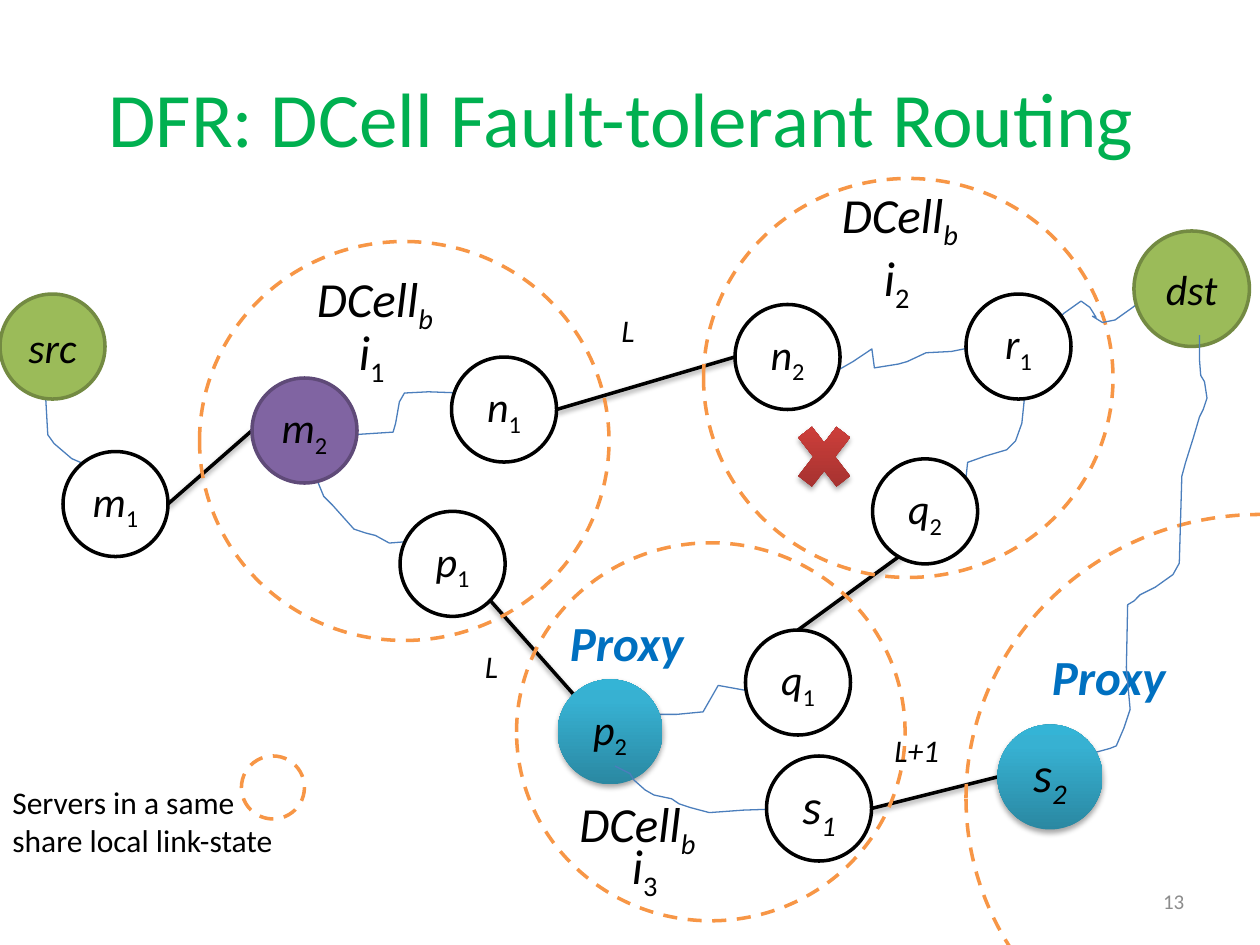
from copy import deepcopy
from pptx import Presentation
from pptx.dml.color import RGBColor
from pptx.enum.dml import MSO_LINE
from pptx.enum.shapes import MSO_CONNECTOR as Link, MSO_SHAPE as Kind
from pptx.enum.text import MSO_ANCHOR as Anchor, PP_ALIGN as Align
from pptx.oxml import parse_xml
from pptx.oxml.ns import nsdecls
from pptx.util import Inches, Pt

UNIT = Inches(1) / 12
FINE = Inches(1) / 100
WHITE, BLACK, ORANGE = "FFFFFF", "000000", "F79646"
TEAL = ("2A88A2", "37B1D2", "34B4D6")
RED = ("9C2F2D", "CB3E3A", "CE3B37")
PLAIN, GREEN, PLUM = (WHITE, BLACK), ("9BBB59", "738A42"), ("8064A2", "5F4A78")

LINKS = [(53, 39, 70, 34), (87, 52, 76, 60), (46.7, 57.2, 54.6, 66.1),
         (16, 48, 24, 41), (83, 77, 95, 74)]
ZONES = [((49.2, 51.7, 37, 36), "3", (4.8, 23.3), (9.8, 27.3)),
         ((19, 23, 39, 38), "1", (10, 2), (14, 7)),
         ((67, 17, 39, 38), "2", (12, 0), (16, 6))]
NODES = [((0, 28, 10), "src", "", GREEN, 24), ((108, 22, 11), "dst", "", GREEN, 24),
         ((6, 43, 10), "m", "1", PLAIN, 24), ((24, 36, 10), "m", "2", PLUM, 24),
         ((43, 34, 10), "n", "1", PLAIN, 24), ((70, 29, 10), "n", "2", PLAIN, 24),
         ((92, 28, 10), "r", "1", PLAIN, 24), ((38.1, 48.7, 10), "p", "1", PLAIN, 24),
         ((53.1, 64.7, 10), "p", "2", TEAL, 24), ((71, 60, 10), "q", "1", PLAIN, 24),
         ((83.1, 43.7, 10), "q", "2", PLAIN, 24)]
ENDS = [((95, 69, 10), "s", "2", TEAL, 28), ((73, 72, 10), "s", "1", PLAIN, 28)]
LOCAL = [
    [(250, 377), (257, 394), (264, 401), (281, 420), (290, 423), (298, 425), (309, 431), (322, 430),
     (340, 430)],
    [(739, 417), (761, 402), (765, 395), (768, 367), (782, 362), (799, 357), (806, 350),
     (811, 336), (813, 317)],
    [(492, 558), (513, 567), (537, 567), (558, 565), (570, 544), (592, 548),
     (611, 553), (627, 548), (637, 548)],
    [(36, 310), (38, 345), (43, 352), (57, 364), (64, 367), (86, 369)],
    [(255, 331), (274, 343), (281, 345), (312, 343), (314, 336), (317, 319), (321, 312),
     (340, 311), (367, 312)],
    [(656, 299), (677, 287), (692, 277), (694, 292), (713, 289), (720, 287),
     (735, 280), (755, 279), (775, 275)],
    [(823, 273), (825, 265), (839, 256), (844, 249), (858, 239), (865, 244), (870, 252),
     (867, 251), (875, 256), (885, 254), (899, 244), (908, 237)],
]
FAR = [
    [(488, 608), (500, 614), (503, 619), (512, 627), (519, 631), (533, 634), (539, 638),
     (548, 641), (563, 645), (590, 643), (620, 642)],
    [(842, 608), (848, 603), (881, 594), (886, 592), (892, 578), (897, 563), (894, 530),
     (895, 480), (900, 477), (905, 472), (917, 466), (931, 456), (936, 447), (938, 378),
     (941, 367), (947, 348), (952, 331), (955, 325), (958, 316), (956, 303), (953, 298),
     (952, 285), (952, 266)],
]


def tint(code):
    return RGBColor.from_string(code)


def box(*cells):
    return [round(cell * UNIT) for cell in cells]


def cast(part, alpha, dist):
    part.element.spPr.append(parse_xml(
        f'<a:effectLst {nsdecls("a")}><a:outerShdw blurRad="40000" dist="{dist}" '
        f'dir="5400000" rotWithShape="0"><a:srgbClr val="000000">'
        f'<a:alpha val="{alpha}"/></a:srgbClr></a:outerShdw></a:effectLst>'))


def blend(shape, codes):
    shape.fill.gradient()
    shape.fill.gradient_angle = 90
    stops = shape.element.spPr.xpath(".//a:gsLst")[0]
    stops.append(deepcopy(stops[0]))
    for stop, code, spot in zip(shape.fill.gradient_stops, codes, (0, 0.8, 1)):
        stop.color.rgb, stop.position = tint(code), spot
    shape.line.fill.background()
    cast(shape, 35000, 23000)


def write(para, words, size, color=BLACK, sub=False, **style):
    run = para.add_run()
    run.text = words
    look = {"name": "Calibri", "size": Pt(size), "bold": False, "italic": True, **style}
    for key, value in look.items():
        setattr(run.font, key, value)
    run.font.color.rgb = tint(color)
    if sub:
        run.font._element.set("baseline", "-25000")


def label(slide, place, words, size, sub="", slant=True, **style):
    frame = slide.shapes.add_textbox(*box(*place)).text_frame
    frame.word_wrap = True
    for num, row in enumerate(words.split("\n")):
        para = frame.add_paragraph() if num else frame.paragraphs[0]
        write(para, row, size, **style)
    if sub:
        write(para, sub, size, sub=True, italic=slant)


def ring(slide, place, fill=None):
    shape = slide.shapes.add_shape(Kind.OVAL, *box(*place))
    shape.shadow.inherit = False
    if fill:
        shape.fill.solid()
        shape.fill.fore_color.rgb = tint(fill)
    else:
        shape.fill.background()
    shape.line.color.rgb = tint(ORANGE)
    shape.line.width = Pt(2)
    shape.line.dash_style = MSO_LINE.DASH


def zone(slide, place, mark, name, index):
    left, top = place[:2]
    label(slide, (left + name[0], top + name[1], 19, 6.8), "DCell", 28, "b")
    label(slide, (left + index[0], top + index[1], 7, 6.8), "i", 28, mark, False)


def node(slide, place, name, mark, paint, size):
    left, top, side = place
    shape = slide.shapes.add_shape(Kind.OVAL, *box(left, top, side, side))
    if len(paint) == 3:
        blend(shape, paint)
    else:
        shape.shadow.inherit = False
        shape.fill.solid()
        shape.fill.fore_color.rgb = tint(paint[0])
        shape.line.color.rgb = tint(paint[1])
        shape.line.width = Pt(2)
    frame = shape.text_frame
    frame.word_wrap = False
    frame.vertical_anchor = Anchor.MIDDLE
    for edge in ("left", "right", "top", "bottom"):
        setattr(frame, f"margin_{edge}", 0)
    para = frame.paragraphs[0]
    para.alignment = Align.CENTER
    write(para, name, size)
    if mark:
        write(para, mark, size, sub=True, italic=size == 28)


def link(slide, ends):
    line = slide.shapes.add_connector(Link.STRAIGHT, *box(*ends))
    line.line.color.rgb = tint(BLACK)
    line.line.width = Pt(2)
    cast(line, 38000, 20000)


def wire(slide, knots):
    start, *rest = [(x * FINE, y * FINE) for x, y in knots]
    pen = slide.shapes.build_freeform(*start)
    pen.add_line_segments(rest, close=False)
    shape = pen.convert_to_shape()
    shape.shadow.inherit = False
    shape.fill.background()
    shape.line.color.rgb = tint("4B7EBC")
    shape.line.width = Pt(0.75)


def head(slide, place):
    title = slide.shapes.title
    title.left, title.top, title.width, title.height = box(*place)
    para = title.text_frame.paragraphs[0]
    para.alignment = Align.CENTER
    write(para, "DFR: DCell Fault-tolerant Routing ", 44, "00B050", italic=False)


def cross(slide, place):
    shape = slide.shapes.add_shape(Kind.MATH_MULTIPLY, *box(*place))
    blend(shape, RED)


def legend(slide, place):
    left, top = place[:2]
    label(slide, place, "Servers in a same\nshare local link-state", 18, italic=False)
    ring(slide, (left + 23, top - 2, 6, 6), WHITE)


def foot(slide, layout, place):
    base = next(p for p in layout.placeholders if p.placeholder_format.idx == 12)
    slide.shapes._spTree.append(deepcopy(base.element))
    page = slide.shapes[-1]
    page.left, page.top, page.width, page.height = box(*place)
    page.text_frame.text = ""
    para = page.text_frame.paragraphs[0]
    para.alignment = Align.RIGHT
    write(para, "13", 12, "8C8C8C", italic=False)


def main():
    prs = Presentation()
    prs.slide_width, prs.slide_height = Inches(10), Inches(7.5)
    layout = prs.slide_layouts[5]
    slide = prs.slides.add_slide(layout)
    head(slide, (6, 3.6, 108, 15))
    for ends in LINKS:
        link(slide, ends)
    for place in [item[0] for item in ZONES] + [(92, 49, 56, 54)]:
        ring(slide, place)
    for knots in LOCAL:
        wire(slide, knots)
    for item in NODES:
        node(slide, *item)
    for item in ZONES:
        zone(slide, *item)
    cross(slide, (75, 39, 7, 9))
    for left, top in ((53.1, 57.7), (99, 61)):
        label(slide, (left, top, 21, 6.8), "Proxy", 28, color="0070C0", bold=True)
    for left, top, wide, words in ((58, 29, 5, "L"), (45, 61, 5, "L"), (84, 69, 11, "L+1")):
        label(slide, (left, top, wide, 4.8), words, 18)
    for knots in FAR:
        wire(slide, knots)
    for item in ENDS:
        node(slide, *item)
    legend(slide, (0, 74, 38, 8.5))
    foot(slide, layout, (86, 83.4, 28, 4.8))
    prs.save("out.pptx")


if __name__ == "__main__":
    main()
